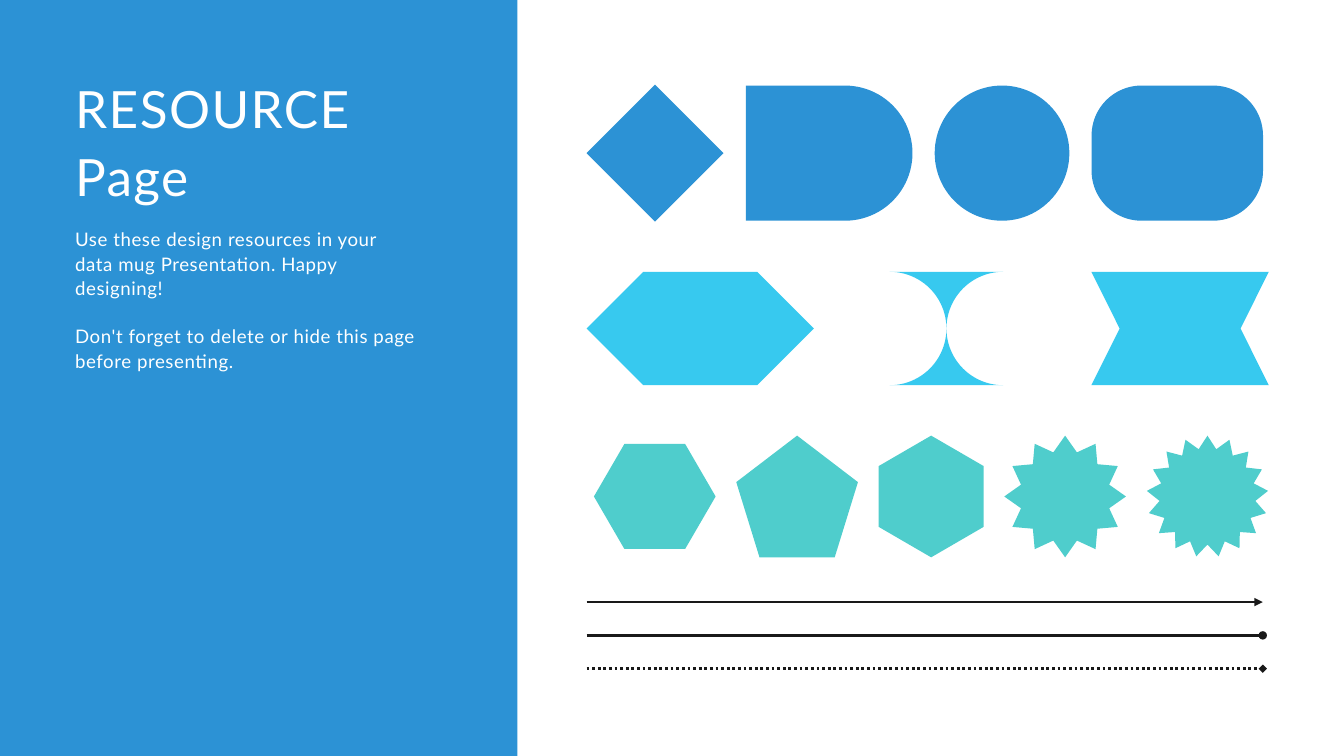
import math

import lxml.etree
import pptx
import pptx.dml.color
import pptx.enum.dml
import pptx.enum.shapes
import pptx.enum.text
import pptx.oxml.ns
import pptx.util

Cm = pptx.util.Cm
Pt = pptx.util.Pt
SHAPE = pptx.enum.shapes.MSO_SHAPE

BLUE, SKY, TEAL = "2C92D5", "37C9EF", "4FCDCC"
WHITE, INK = "FFFFFF", "191919"
LEFT = 22.17


def colour(hex_code):
    """Turn a hex string into a colour."""
    return pptx.dml.color.RGBColor.from_string(hex_code)


def paint(shape, fill):
    """Give a shape a flat fill without outline or shadow."""
    shape.shadow.inherit = False
    shape.fill.solid()
    shape.fill.fore_color.rgb = colour(fill)
    shape.line.fill.background()
    return shape


def add_preset(slide, kind, box, fill, adjustments=(), turned=False):
    """Add a preset that fills box, optionally turned a quarter clockwise."""
    left, top, width, height = box
    if turned:
        shift = (width - height) / 2
        left, top, width, height = left + shift, top - shift, height, width
    shape = slide.shapes.add_shape(kind, Cm(left), Cm(top), Cm(width), Cm(height))
    for index, value in enumerate(adjustments):
        shape.adjustments[index] = value
    if turned:
        shape.rotation = 90
    return paint(shape, fill)


def add_outline(slide, points, fill):
    """Add a closed freeform through points given in centimetres."""
    corners = [(Cm(x), Cm(y)) for x, y in points]
    builder = slide.shapes.build_freeform(*corners[0])
    builder.add_line_segments(corners[1:], close=True)
    return paint(builder.convert_to_shape(), fill)


def arc(x, y, radius, start, end, steps=48):
    """Return points on a circle between two angles in degrees."""
    angles = [math.radians(start + (end - start) * i / steps) for i in range(steps + 1)]
    return [(x + radius * math.cos(a), y + radius * math.sin(a)) for a in angles]


def star(x, y, radius, tips, inner):
    """Return the corners of a star whose first tip points up."""
    points = []
    for i in range(2 * tips):
        reach = radius * (inner if i % 2 else 1)
        angle = math.pi * i / tips
        points.append((x + reach * math.sin(angle), y - reach * math.cos(angle)))
    return points


def add_row(slide, left, middle, gap, fill, items):
    """Place presets side by side, centred on one horizontal line."""
    for kind, width, height, adjustments, turned in items:
        box = (left, middle - height / 2, width, height)
        add_preset(slide, kind, box, fill, adjustments, turned)
        left += width + gap
    return left


def add_ribbon_row(slide):
    """Add the hexagon, hourglass and notched ribbon."""
    middle, height = 12.42, 4.29
    half = height / 2
    top, bottom = middle - half, middle + half
    add_preset(slide, SHAPE.HEXAGON, (LEFT, top, 8.59, height), SKY, [0.5])
    start, end = 33.63, 33.63 + height
    waist = arc(start, middle, half, 90, -90) + arc(end, middle, half, 270, 90)
    add_outline(slide, waist, SKY)
    start, end, notch = 41.25, 47.96, 1.07
    ribbon = [(end, top), (start, top), (start + notch, middle),
              (start, bottom), (end, bottom), (end - notch, middle)]
    add_outline(slide, ribbon, SKY)


def add_arrow(slide, y, head, dash=None):
    """Add a horizontal line with an end mark."""
    arrow = slide.shapes.add_connector(
        pptx.enum.shapes.MSO_CONNECTOR.STRAIGHT, Cm(LEFT), Cm(y), Cm(47.73), Cm(y))
    arrow.line.color.rgb = colour(INK)
    arrow.line.width = Pt(3)
    if dash:
        arrow.line.dash_style = dash
    qn = pptx.oxml.ns.qn
    properties = arrow._element.spPr
    lxml.etree.SubElement(properties.find(qn("a:ln")), qn("a:tailEnd"), type=head)
    lxml.etree.SubElement(properties, qn("a:effectLst"))


def write(shape, box, paragraphs, size, leading, tracking, gap=0):
    """Place a text shape and fill it with white Lato paragraphs."""
    shape.left, shape.top, shape.width, shape.height = map(Cm, box)
    frame = shape.text_frame
    frame.word_wrap = True
    frame.auto_size = pptx.enum.text.MSO_AUTO_SIZE.NONE
    frame.vertical_anchor = pptx.enum.text.MSO_ANCHOR.TOP
    frame.margin_left = frame.margin_right = frame.margin_top = frame.margin_bottom = 0
    for index, text in enumerate(paragraphs):
        paragraph = frame.add_paragraph() if index else frame.paragraphs[0]
        paragraph.alignment = pptx.enum.text.PP_ALIGN.LEFT
        paragraph.line_spacing = Pt(leading)
        paragraph.space_before = Pt(gap if index else 0)
        run = paragraph.add_run()
        run.text = text
        run.font.name = "Lato"
        run.font.size = Pt(size)
        run.font.color.rgb = colour(WHITE)
        run._r.get_or_add_rPr().set("spc", str(tracking))


def main():
    """Build the resource page."""
    deck = pptx.Presentation()
    deck.slide_width, deck.slide_height = Cm(50.8), Cm(28.58)
    slide = deck.slides.add_slide(deck.slide_layouts[5])

    panel = add_preset(slide, SHAPE.RECTANGLE, (0, 0, 19.56, 28.58), BLUE)
    slide.shapes._spTree.insert(2, panel._element)
    write(slide.shapes.title, (2.84, 2.72, 14.05, 5), ["RESOURCE", "Page"], 55, 72, 160)
    guidance = slide.shapes.add_textbox(0, 0, 0, 0)
    write(guidance, (2.84, 8.56, 12.95, 5.49), [
        "Use these design resources in your data mug Presentation. Happy designing!",
        "Don't forget to delete or hide this page before presenting.",
    ], 20, 26, 60, gap=26)

    add_row(slide, LEFT, 5.79, 0.84, BLUE, [
        (SHAPE.DIAMOND, 5.18, 5.18, [], False),
        (SHAPE.ROUND_2_SAME_RECTANGLE, 6.3, 5.11, [0.5, 0], True),
        (SHAPE.OVAL, 5.09, 5.11, [], False),
        (SHAPE.ROUNDED_RECTANGLE, 6.48, 5.11, [0.37], False),
    ])
    add_ribbon_row(slide)
    size, flat, middle = 4.6, 3.97, 18.77
    burst_left = add_row(slide, 22.45, middle, 0.78, TEAL, [
        (SHAPE.HEXAGON, size, flat, [0.29], False),
        (SHAPE.REGULAR_PENTAGON, size, size, [], False),
        (SHAPE.HEXAGON, flat, size, [0.29], True),
        (SHAPE.STAR_12_POINT, size, size, [], False),
    ])
    add_outline(slide, star(burst_left + size / 2, middle, size / 2, 17, 0.79), TEAL)

    dots = pptx.enum.dml.MSO_LINE.ROUND_DOT
    for index, (head, dash) in enumerate(
            [("triangle", None), ("oval", None), ("diamond", dots)]):
        add_arrow(slide, 22.76 + 1.26 * index, head, dash)
    deck.save("out.pptx")


if __name__ == "__main__":
    main()
